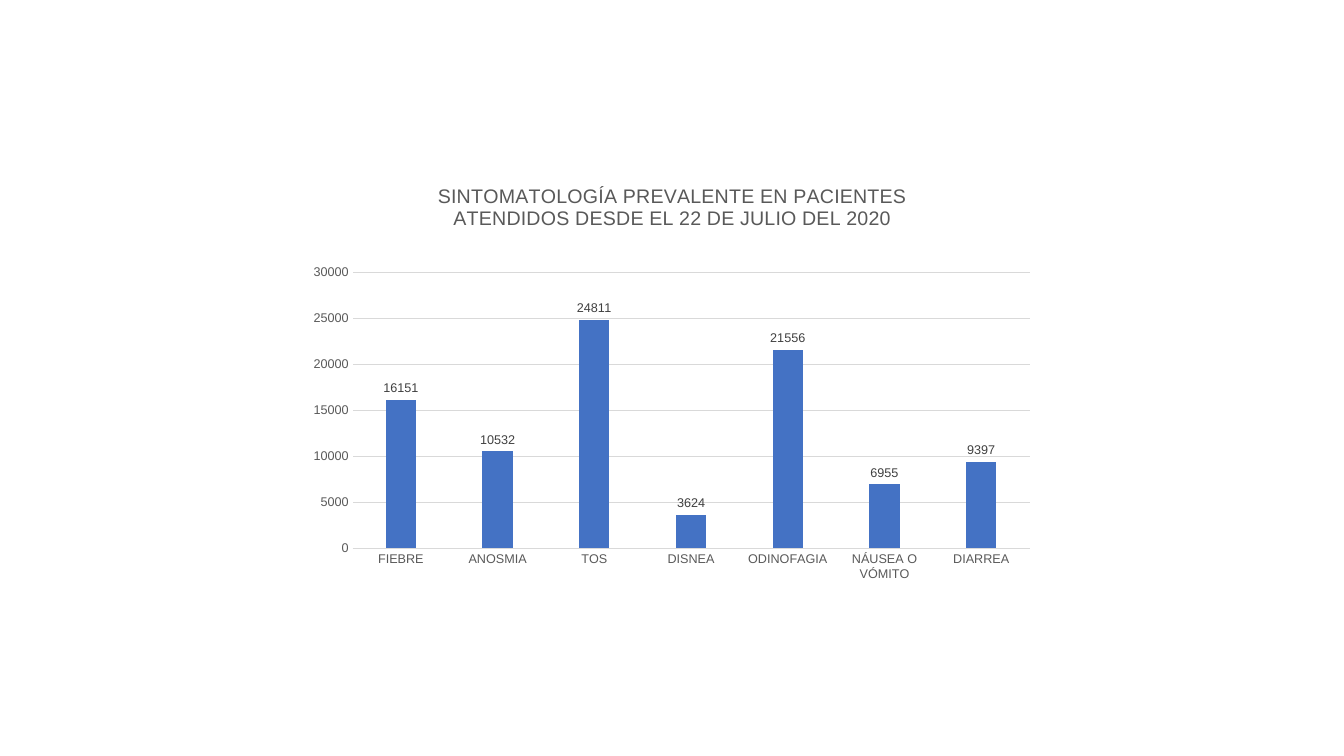
from dataclasses import dataclass

from lxml import etree
from pptx import Presentation
from pptx.chart.data import CategoryChartData
from pptx.dml.color import RGBColor
from pptx.enum.chart import XL_CHART_TYPE, XL_LABEL_POSITION, XL_TICK_MARK
from pptx.oxml.ns import qn
from pptx.util import Inches, Pt


@dataclass(frozen=True)
class Theme:
    font: str = "Arial"
    background: str = "FFFFFF"
    base: str = "000000"
    muted: str = "595959"
    label: str = "404040"
    rule: str = "D9D9D9"
    bar: str = "4472C4"
    title_size: float = 14
    base_size: float = 10
    small_size: float = 9
    rule_width: float = 0.75
    number_format: str = "###0"


class SlideBuilder:
    def __init__(self, presentation, theme):
        self.theme = theme
        self.width = presentation.slide_width
        self.height = presentation.slide_height
        self.slide = presentation.slides.add_slide(presentation.slide_layouts[6])
        fill = self.slide.background.fill
        fill.solid()
        fill.fore_color.rgb = RGBColor.from_string(theme.background)

    def style_font(self, font, size, color):
        font.name = self.theme.font
        font.size = Pt(size)
        font.bold = False
        font.color.rgb = RGBColor.from_string(color)

    def style_rule(self, line):
        line.color.rgb = RGBColor.from_string(self.theme.rule)
        line.width = Pt(self.theme.rule_width)

    def style_title(self, chart, title):
        chart.has_title = True
        chart.chart_title.include_in_layout = False
        paragraph = chart.chart_title.text_frame.paragraphs[0]
        paragraph.text = title
        self.style_font(paragraph.runs[0].font, self.theme.title_size, self.theme.muted)

    def style_axes(self, chart):
        for axis in (chart.category_axis, chart.value_axis):
            axis.major_tick_mark = axis.minor_tick_mark = XL_TICK_MARK.NONE
            self.style_font(axis.tick_labels.font, self.theme.small_size, self.theme.muted)
        chart.category_axis.has_major_gridlines = False
        self.style_rule(chart.category_axis.format.line)

        counts = chart.value_axis
        counts.minimum_scale, counts.maximum_scale, counts.major_unit = 0, 30000, 5000
        counts.tick_labels.number_format = self.theme.number_format
        counts.tick_labels.number_format_is_linked = False
        counts.format.line.fill.background()
        counts.has_major_gridlines = True
        self.style_rule(counts.major_gridlines.format.line)

    def style_bars(self, plot):
        plot.gap_width, plot.overlap = 219, -27
        plot.vary_by_categories = False
        bars = plot.series[0]
        bars.invert_if_negative = False
        bars.format.fill.solid()
        bars.format.fill.fore_color.rgb = RGBColor.from_string(self.theme.bar)
        labels = bars.data_labels
        labels.show_value = True
        labels.position = XL_LABEL_POSITION.OUTSIDE_END
        labels.number_format = self.theme.number_format
        labels.number_format_is_linked = False
        self.style_font(labels.font, self.theme.small_size, self.theme.label)

    def place_plot(self, chart, area):
        """Fix the inner plot area, given as shares of the chart."""
        plot_area = chart.element.find(".//" + qn("c:plotArea"))
        for automatic in plot_area.findall(qn("c:layout")):
            plot_area.remove(automatic)
        layout = etree.Element(qn("c:layout"))
        plot_area.insert(0, layout)
        manual = etree.SubElement(layout, qn("c:manualLayout"))
        settings = [("layoutTarget", "inner"), ("xMode", "edge"), ("yMode", "edge")]
        settings += zip("xywh", area)
        for tag, value in settings:
            etree.SubElement(manual, qn(f"c:{tag}")).set("val", str(value))

    def column_chart(self, title, counts, area, plot_area):
        """Draw a column chart; area is in shares of the slide."""
        data = CategoryChartData(number_format=self.theme.number_format)
        data.categories = list(counts)
        data.add_series("Series 1", list(counts.values()))
        left, top, width, height = area
        chart = self.slide.shapes.add_chart(
            XL_CHART_TYPE.COLUMN_CLUSTERED,
            round(left * self.width), round(top * self.height),
            round(width * self.width), round(height * self.height), data,
        ).chart
        self.style_font(chart.font, self.theme.base_size, self.theme.base)
        chart.has_legend = False
        self.style_title(chart, title)
        self.style_axes(chart)
        self.style_bars(chart.plots[0])
        self.place_plot(chart, plot_area)


def main():
    presentation = Presentation()
    presentation.slide_width, presentation.slide_height = Inches(13.33), Inches(7.5)
    symptom_counts = {
        "FIEBRE": 16151,
        "ANOSMIA": 10532,
        "TOS": 24811,
        "DISNEA": 3624,
        "ODINOFAGIA": 21556,
        "NÁUSEA O VÓMITO": 6955,
        "DIARREA": 9397,
    }
    SlideBuilder(presentation, Theme()).column_chart(
        "SINTOMATOLOGÍA PREVALENTE EN PACIENTES ATENDIDOS DESDE EL 22 DE JULIO DEL 2020",
        symptom_counts,
        area=(2.98 / 13.33, 0.22, 7.38 / 13.33, 4.21 / 7.5),
        plot_area=(0.07, 0.25, 0.91, 0.65),
    )
    presentation.save("out.pptx")


if __name__ == "__main__":
    main()
